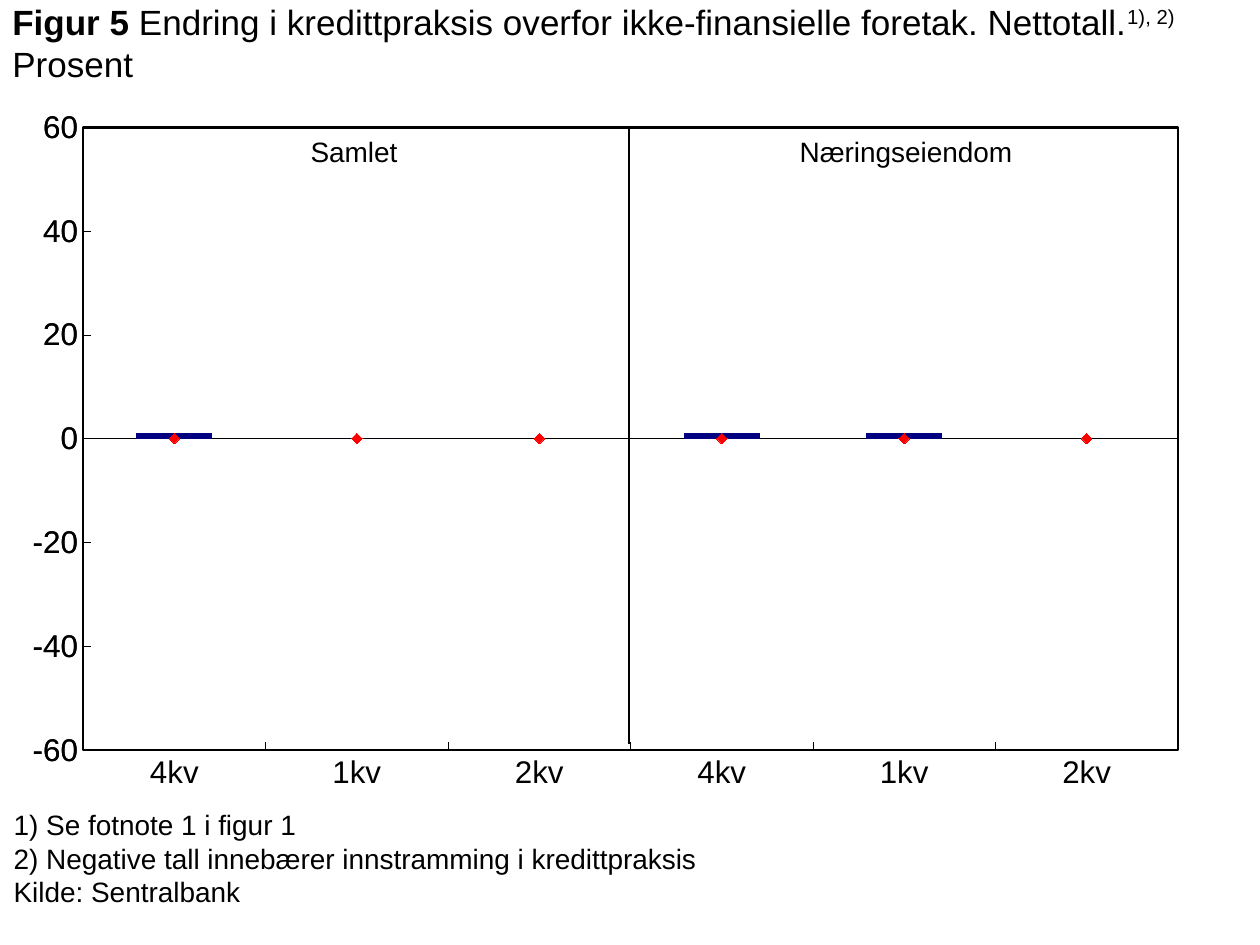
from copy import deepcopy

from lxml import etree
from pptx import Presentation
from pptx.chart.axis import CategoryAxis, ValueAxis
from pptx.chart.data import CategoryChartData
from pptx.dml.color import RGBColor
from pptx.enum.chart import (XL_AXIS_CROSSES, XL_CHART_TYPE, XL_MARKER_STYLE,
                             XL_TICK_LABEL_POSITION, XL_TICK_MARK)
from pptx.enum.shapes import MSO_CONNECTOR
from pptx.enum.text import MSO_ANCHOR, PP_ALIGN
from pptx.oxml import parse_xml
from pptx.oxml.ns import nsdecls, qn
from pptx.util import Pt

COLUMNS = XL_CHART_TYPE.COLUMN_CLUSTERED
DIAMOND = XL_MARKER_STYLE.DIAMOND
INSIDE, NO_TICK = XL_TICK_MARK.INSIDE, XL_TICK_MARK.NONE
NEXT_TO_AXIS, NO_LABELS = XL_TICK_LABEL_POSITION.NEXT_TO_AXIS, XL_TICK_LABEL_POSITION.NONE
AT_MINIMUM, AT_MAXIMUM = XL_AXIS_CROSSES.MINIMUM, XL_AXIS_CROSSES.MAXIMUM
TOP, MIDDLE = MSO_ANCHOR.TOP, MSO_ANCHOR.MIDDLE
LEFT, CENTER = PP_ALIGN.LEFT, PP_ALIGN.CENTER
STRAIGHT = MSO_CONNECTOR.STRAIGHT

BLACK, NAVY, RED = "000000", "000080", "FF0000"
QUARTERS = ["4kv", "1kv", "2kv"]
PANELS = ["Samlet", "Næringseiendom"]
BLANK = [None] * 3
SERIES = [
    ("Series 1", [1, 0, None] + BLANK),
    ("Series 2", BLANK + [1, 1, None]),
    ("Series 3", [0, 0, 0] + BLANK),
    ("Series 4", BLANK + [0, 0, 0]),
]
COLUMN_COUNT = 2
PLOT_AREA = {"x": 0.066, "y": 0.026, "w": 0.869, "h": 0.866}


def color(value):
    return RGBColor.from_string(value)


def move_to_line_chart(bar_chart, first_series):
    """Move the later series to a line chart on a second pair of axes."""
    plot_area = bar_chart.getparent()
    line_chart = parse_xml(
        f'<c:lineChart {nsdecls("c")}><c:grouping val="standard"/>'
        '<c:varyColors val="0"/><c:marker val="1"/>'
        '<c:axId val="501"/><c:axId val="502"/></c:lineChart>')
    marker_flag = line_chart.find(qn("c:marker"))
    for series in bar_chart.findall(qn("c:ser"))[first_series:]:
        for bar_only in series.findall(qn("c:invertIfNegative")):
            series.remove(bar_only)
        marker_flag.addprevious(series)
    bar_chart.addnext(line_chart)

    axes = []
    for name, own_id, other_id, side in (("c:catAx", "501", "502", "b"),
                                         ("c:valAx", "502", "501", "r")):
        axis = deepcopy(plot_area.find(qn(name)))
        for tag, value in (("c:axId", own_id), ("c:crossAx", other_id), ("c:axPos", side)):
            axis.find(qn(tag)).set("val", value)
        axes.append(axis)
    last_axis = plot_area.findall(qn("c:valAx"))[-1]
    for axis in reversed(axes):
        last_axis.addnext(axis)
    return CategoryAxis(axes[0]), ValueAxis(axes[1])


def frame_plot_area(plot_area):
    """Fix the inner plot area and draw a black border round it."""
    for layout in plot_area.findall(qn("c:layout")):
        plot_area.remove(layout)
    places = "".join(f'<c:{key} val="{value}"/>' for key, value in PLOT_AREA.items())
    plot_area.insert(0, parse_xml(
        f'<c:layout {nsdecls("c")}><c:manualLayout><c:layoutTarget val="inner"/>'
        f'<c:xMode val="edge"/><c:yMode val="edge"/>{places}</c:manualLayout></c:layout>'))
    plot_area.append(parse_xml(
        f'<c:spPr {nsdecls("c", "a")}><a:noFill/><a:ln w="{Pt(1.5)}"><a:solidFill>'
        f'<a:srgbClr val="{BLACK}"/></a:solidFill></a:ln></c:spPr>'))


class SlideBuilder:
    def __init__(self, slide, font="Arial", ink=BLACK):
        self.slide = slide
        self.font = font
        self.ink = ink

    def style_font(self, font, size):
        font.name = self.font
        font.size = Pt(size)
        font.color.rgb = color(self.ink)

    def text(self, box, paragraphs, size, align=LEFT, anchor=TOP, hanging=0):
        """Each paragraph is a list of (text, look); look is "", "bold" or "super"."""
        shape = self.slide.shapes.add_textbox(*map(Pt, box))
        frame = shape.text_frame
        frame.word_wrap = True
        frame.vertical_anchor = anchor
        for index, runs in enumerate(paragraphs):
            paragraph = frame.add_paragraph() if index else frame.paragraphs[0]
            paragraph.alignment = align
            if hanging:
                properties = paragraph._p.get_or_add_pPr()
                properties.set("marL", str(Pt(hanging)))
                properties.set("indent", str(-Pt(hanging)))
            for content, look in runs:
                run = paragraph.add_run()
                run.text = content
                self.style_font(run.font, size)
                run.font.bold = look == "bold"
                if look == "super":
                    run.font._element.set("baseline", "30000")

    def line(self, start, end, width):
        connector = self.slide.shapes.add_connector(STRAIGHT, *map(Pt, start + end))
        connector.line.color.rgb = color(self.ink)
        connector.line.width = Pt(width)
        etree.SubElement(connector._element.spPr, qn("a:effectLst"))

    def style_axis(self, axis, tick, labels):
        axis.major_tick_mark = tick
        axis.minor_tick_mark = NO_TICK
        axis.tick_label_position = labels
        axis.format.line.color.rgb = color(self.ink)
        axis.format.line.width = Pt(0.25)
        self.style_font(axis.tick_labels.font, 17.9)

    def credit_chart(self, box):
        data = CategoryChartData()
        data.categories = QUARTERS * len(PANELS)
        for name, values in SERIES:
            data.add_series(name, values)
        chart = self.slide.shapes.add_chart(COLUMNS, *map(Pt, box), data).chart
        chart.has_legend = False
        chart.has_title = False
        self.style_font(chart.font, 17.9)

        value_axis = chart.value_axis
        value_axis.has_major_gridlines = False
        value_axis.minimum_scale, value_axis.maximum_scale = -60, 60
        value_axis.major_unit = 20
        value_axis.tick_labels.number_format = "0"
        value_axis.tick_labels.number_format_is_linked = False
        self.style_axis(value_axis, INSIDE, NEXT_TO_AXIS)

        columns = chart.plots[0]
        plot_area = columns._element.getparent()
        bottom_axis, right_axis = move_to_line_chart(columns._element, COLUMN_COUNT)
        self.style_axis(chart.category_axis, NO_TICK, NO_LABELS)
        self.style_axis(bottom_axis, INSIDE, NEXT_TO_AXIS)
        right_axis.crosses = AT_MINIMUM
        bottom_axis.crosses = AT_MAXIMUM
        frame_plot_area(plot_area)

        columns.gap_width = 140
        columns.overlap = 100
        columns.vary_by_categories = False
        for series in columns.series:
            series.format.fill.solid()
            series.format.fill.fore_color.rgb = color(NAVY)
        for series in chart.plots[1].series:
            series.smooth = False
            series.format.line.fill.background()
            marker = series.marker
            marker.style = DIAMOND
            marker.size = 6
            marker.format.fill.solid()
            marker.format.fill.fore_color.rgb = color(RED)
            marker.format.line.color.rgb = color(RED)


def main():
    presentation = Presentation()
    presentation.slide_width, presentation.slide_height = Pt(720), Pt(540)
    builder = SlideBuilder(presentation.slides.add_slide(presentation.slide_layouts[6]))

    builder.credit_chart((0, 62, 720, 411))
    footnotes = ["1) Se fotnote 1 i figur 1",
                 "2) Negative tall innebærer innstramming i kredittpraksis",
                 "Kilde: Sentralbank"]
    builder.text((0.7, 458, 608, 68), [[(note, "")] for note in footnotes], 16, hanging=27)
    panel_width = 315.4
    for index, panel in enumerate(PANELS):
        builder.text((44.6 + index * panel_width, 73.4, panel_width, 27),
                     [[(panel, "")]], 16, align=CENTER)
    builder.line((359.4, 73.4), (359.4, 425), 0.75)
    builder.text((0, 0, 701, 48), [[
        ("Figur 5 ", "bold"),
        ("Endring i kredittpraksis overfor ikke-finansielle foretak. Nettotall.", ""),
        ("1), 2)", "super"),
        (" Prosent", ""),
    ]], 20, anchor=MIDDLE)
    presentation.save("out.pptx")


if __name__ == "__main__":
    main()
